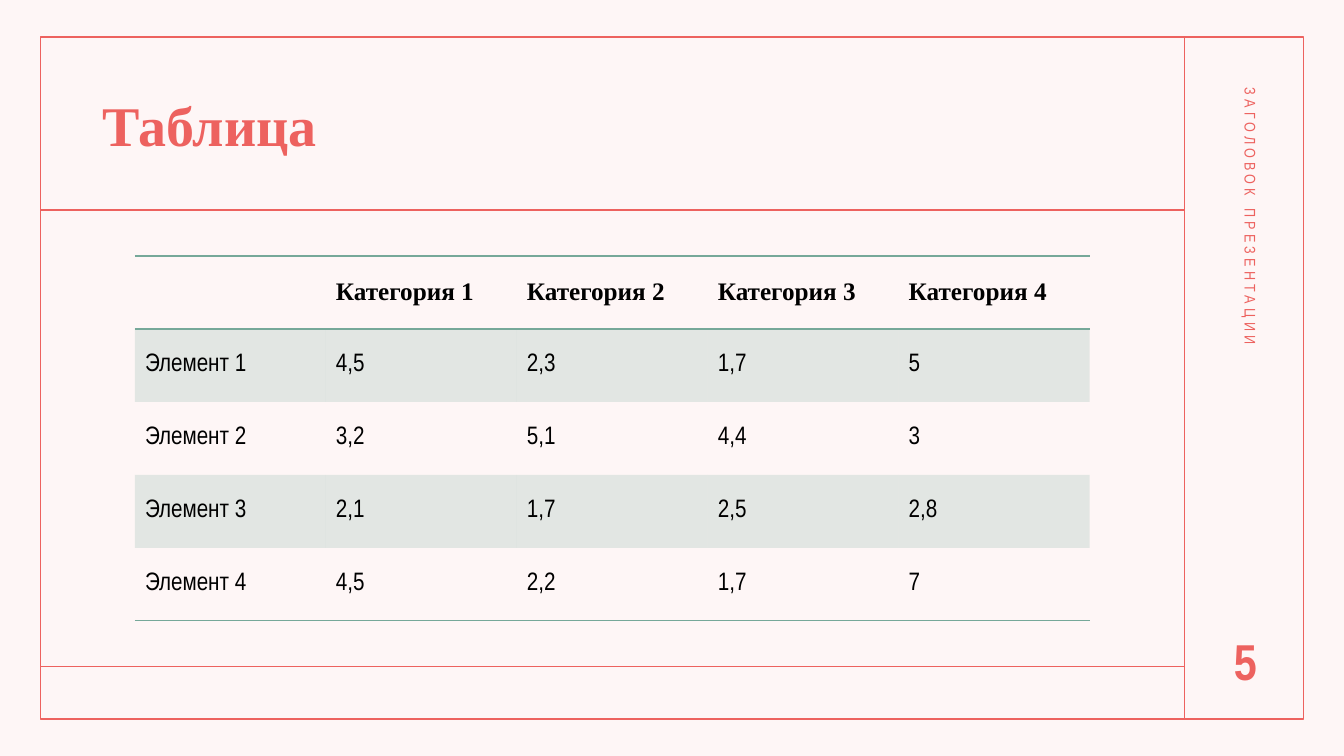
from dataclasses import dataclass

from lxml import etree
from pptx import Presentation
from pptx import util as u
from pptx.dml.color import RGBColor
from pptx.enum import shapes, text
from pptx.oxml import ns


@dataclass(frozen=True)
class Theme:
    coral: RGBColor = RGBColor(0xED, 0x62, 0x5F)
    blush: RGBColor = RGBColor(0xFE, 0xF6, 0xF6)
    green: RGBColor = RGBColor(0x76, 0xA8, 0x99)
    black: RGBColor = RGBColor(0, 0, 0)
    serif: str = "Times New Roman"
    narrow: str = "Arial Narrow"
    title_size: int = 40
    number_size: int = 36
    table_size: int = 18
    label_size: int = 11


theme = Theme()


def write(frame, words, font, size, color, bold=False, align=None,
          anchor=text.MSO_ANCHOR.TOP, line_spacing=None, tracking=None):
    """Put one formatted line of text into a text frame."""
    frame.word_wrap = True
    frame.vertical_anchor = anchor
    paragraph = frame.paragraphs[0]
    paragraph.alignment = align
    paragraph.line_spacing = line_spacing
    run = paragraph.add_run()
    run.text = words
    run.font.name = font
    run.font.size = u.Pt(size)
    run.font.bold = bold
    run.font.color.rgb = color
    if tracking:
        run.font._element.set("spc", str(tracking * 100))


def add_border(cell, side):
    """Draw a green line on one side of a cell, before its fill is set."""
    border = etree.SubElement(cell._tc.get_or_add_tcPr(), ns.qn(f"a:{side}"), w=str(u.Pt(1)))
    solid = etree.SubElement(border, ns.qn("a:solidFill"))
    etree.SubElement(solid, ns.qn("a:srgbClr"), val=str(theme.green))


deck = Presentation()
deck.slide_width, deck.slide_height = u.Pt(960), u.Pt(540)
slide = deck.slides.add_slide(deck.slide_layouts[6])
slide.background.fill.solid()
slide.background.fill.fore_color.rgb = theme.blush

# Frame and dividers
left, top, right, bottom = 29, 26.5, 931, 513.5
sidebar_x, header_y, footer_y = 846, 150, 476
border_frame = slide.shapes.add_shape(
    shapes.MSO_SHAPE.RECTANGLE, u.Pt(left), u.Pt(top), u.Pt(right - left), u.Pt(bottom - top))
border_frame.shadow.inherit = False
border_frame.fill.background()
border_frame.line.color.rgb = theme.coral
border_frame.line.width = u.Pt(1)

for x1, y1, x2, y2 in [
    (sidebar_x, top, sidebar_x, bottom),
    (left, header_y, sidebar_x, header_y),
    (left, footer_y, sidebar_x, footer_y),
]:
    divider = slide.shapes.add_connector(
        shapes.MSO_CONNECTOR.STRAIGHT, u.Pt(x1), u.Pt(y1), u.Pt(x2), u.Pt(y2))
    divider.line.color.rgb = theme.coral
    divider.line.width = u.Pt(1)
    etree.SubElement(divider._element.spPr, ns.qn("a:effectLst"))

# Title
title = slide.shapes.add_textbox(u.Pt(66), u.Pt(43), u.Pt(750), u.Pt(98))
write(title.text_frame, "Таблица", theme.serif, theme.title_size, theme.coral, bold=True,
      anchor=text.MSO_ANCHOR.MIDDLE, line_spacing=0.9)

# Table
rows = [
    ["", "Категория 1", "Категория 2", "Категория 3", "Категория 4"],
    ["Элемент 1", "4,5", "2,3", "1,7", "5"],
    ["Элемент 2", "3,2", "5,1", "4,4", "3"],
    ["Элемент 3", "2,1", "1,7", "2,5", "2,8"],
    ["Элемент 4", "4,5", "2,2", "1,7", "7"],
]
column_width, row_height = 136.4, 52.15
table_frame = slide.shapes.add_table(
    len(rows), len(rows[0]), u.Pt(96.4), u.Pt(182.8),
    u.Pt(column_width * len(rows[0])), u.Pt(row_height * len(rows)))
table = table_frame.table
table.first_row = table.horz_banding = False
# The "No Style, No Grid" table style
table._tbl.tblPr.find(ns.qn("a:tableStyleId")).text = "{2D5ABB26-0587-4C30-8999-92F81FD0307C}"
for column in table.columns:
    column.width = u.Pt(column_width)

border_sides = {0: ["lnT", "lnB"], len(rows) - 1: ["lnB"]}
for r, values in enumerate(rows):
    table.rows[r].height = u.Pt(row_height)
    for c, value in enumerate(values):
        cell = table.cell(r, c)
        cell.vertical_anchor = text.MSO_ANCHOR.MIDDLE
        for side in border_sides.get(r, []):
            add_border(cell, side)
        if r % 2:
            cell.fill.solid()
            cell.fill.fore_color.rgb = theme.green
            tint = cell._tc.tcPr.find(".//" + ns.qn("a:srgbClr"))
            etree.SubElement(tint, ns.qn("a:alpha"), val="20000")
        else:
            cell.fill.background()
        if value:
            write(cell.text_frame, value, theme.narrow if r else theme.serif,
                  theme.table_size, theme.black, bold=r == 0, anchor=text.MSO_ANCHOR.MIDDLE)

# Sidebar: running title and slide number
running_title = slide.shapes.add_textbox(u.Pt(727), u.Pt(203), u.Pt(324), u.Pt(29))
running_title.rotation = 90
write(running_title.text_frame, "ЗАГОЛОВОК ПРЕЗЕНТАЦИИ", theme.narrow, theme.label_size,
      theme.coral, tracking=3)

slide_number = slide.shapes.add_textbox(u.Pt(852), u.Pt(446.5), u.Pt(75), u.Pt(60))
write(slide_number.text_frame, "5", theme.narrow, theme.number_size, theme.coral, bold=True,
      align=text.PP_ALIGN.CENTER)

deck.save("out.pptx")
